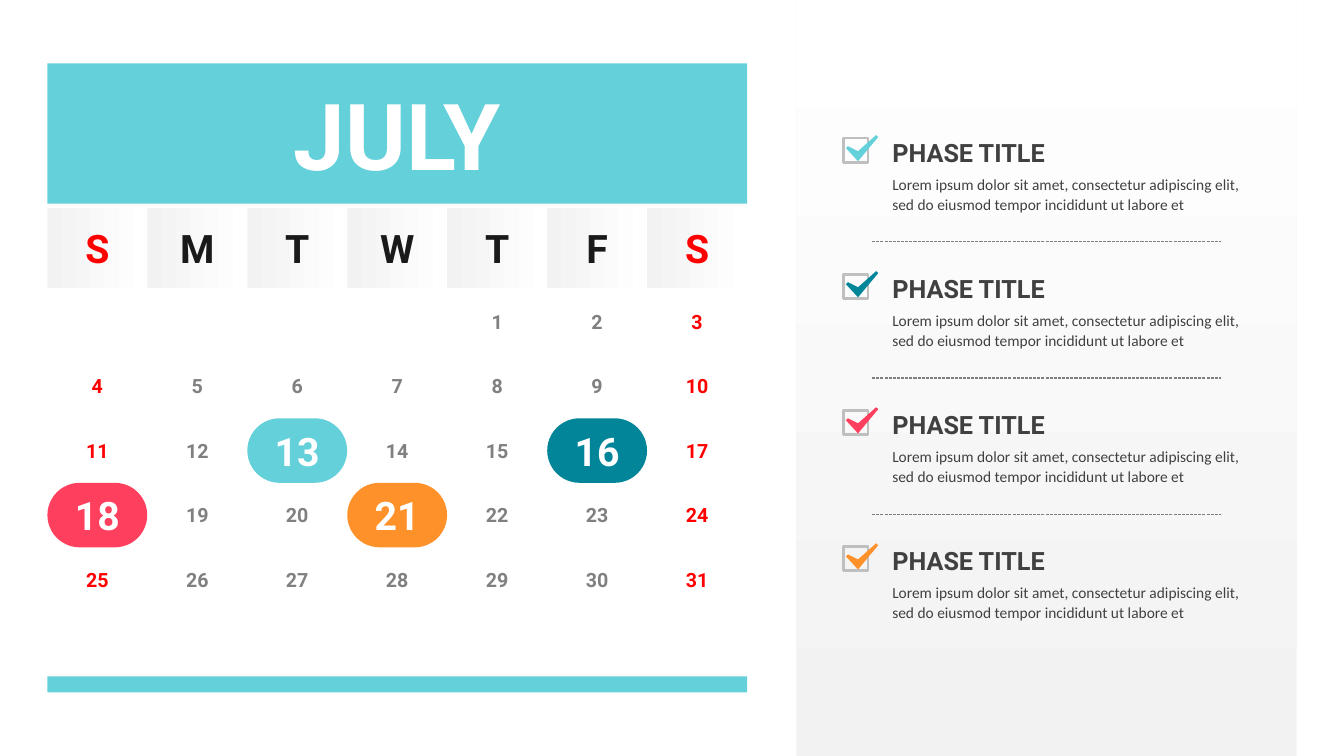
from dataclasses import dataclass

from lxml import etree
from pptx import Presentation
from pptx.dml.color import RGBColor
from pptx.enum.dml import MSO_LINE
from pptx.enum.shapes import MSO_CONNECTOR, MSO_SHAPE
from pptx.enum.text import MSO_ANCHOR, MSO_AUTO_SIZE, PP_ALIGN
from pptx.oxml.ns import qn
from pptx.util import Inches, Pt

RECT = MSO_SHAPE.RECTANGLE
PILL = MSO_SHAPE.ROUNDED_RECTANGLE
STRAIGHT = MSO_CONNECTOR.STRAIGHT
SYS_DASH = MSO_LINE.SQUARE_DOT
CENTER, LEFT = PP_ALIGN.CENTER, PP_ALIGN.LEFT
MIDDLE, TOP = MSO_ANCHOR.MIDDLE, MSO_ANCHOR.TOP
FIXED, GROW = MSO_AUTO_SIZE.NONE, MSO_AUTO_SIZE.SHAPE_TO_FIT_TEXT


@dataclass(frozen=True)
class Theme:
    heading_font: str = "Roboto"
    body_font: str = "Calibri"
    aqua: str = "64D0DA"
    teal: str = "028599"
    pink: str = "FF3F5E"
    orange: str = "FE912A"
    white: str = "FFFFFF"
    pale: str = "F2F2F2"
    weekend: str = "FF0000"
    weekday: str = "1A1A1A"
    date: str = "808080"
    text: str = "404040"
    box: str = "BFBFBF"
    month_size: int = 66
    large_size: int = 28
    phase_size: int = 18
    date_size: int = 14
    body_size: int = 11


def apply(target, values):
    for attribute, value in values.items():
        setattr(target, attribute, value)


class CalendarSlide:
    def __init__(self, slide, theme):
        self.slide, self.shapes, self.theme = slide, slide.shapes, theme

    def frame(self, shape, anchor=MIDDLE, auto_size=FIXED):
        frame = shape.text_frame
        apply(frame, dict(margin_left=0, margin_right=0, margin_top=0, margin_bottom=0,
                          word_wrap=True, vertical_anchor=anchor, auto_size=auto_size))
        return frame

    def add_text(self, paragraph, text, size, color, font=None, bold=True, **layout):
        apply(paragraph, {"alignment": CENTER, **layout})
        run = paragraph.add_run()
        run.text = text
        apply(run.font, dict(name=font or self.theme.heading_font, size=Pt(size), bold=bold))
        run.font.color.rgb = RGBColor.from_string(color)

    def label(self, shape, text, size, color):
        self.add_text(self.frame(shape).paragraphs[0], text, size, color)

    def paint(self, shape, color):
        shape.fill.solid()
        shape.fill.fore_color.rgb = RGBColor.from_string(color)
        shape.line.fill.background()

    def title(self, text, left, top, width, height):
        title = self.shapes.title
        apply(title, dict(left=Inches(left), top=Inches(top),
                          width=Inches(width), height=Inches(height)))
        self.paint(title, self.theme.aqua)
        self.label(title, text, self.theme.month_size, self.theme.white)

    def block(self, kind, left, top, width, height, color=None):
        block = self.shapes.add_shape(kind, Inches(left), Inches(top), Inches(width), Inches(height))
        block.shadow.inherit = False
        if color:
            self.paint(block, color)
        return block

    def fade(self, left, top, width, height, angle):
        block = self.block(RECT, left, top, width, height)
        block.line.fill.background()
        block.fill.gradient()
        block.fill.gradient_angle = angle
        for stop, color in zip(block.fill.gradient_stops, (self.theme.pale, self.theme.white)):
            stop.color.rgb = RGBColor.from_string(color)
        return block

    def text_box(self, left, top, width, height):
        return self.shapes.add_textbox(Inches(left), Inches(top), Inches(width), Inches(height))

    def checkbox(self, left, top, color):
        box = self.block(RECT, left, top, 0.24, 0.24)
        box.fill.background()
        box.line.color.rgb = RGBColor.from_string(self.theme.box)
        box.line.width = Pt(2)
        start, *rest = [(30, 0), (32, 2), (12, 26), (0, 13), (2, 11), (12, 16)]
        outline = self.shapes.build_freeform(*start, scale=Inches(0.01))
        outline.add_line_segments(rest, close=True)
        tick = outline.convert_to_shape(Inches(left + 0.02), Inches(top - 0.03))
        tick.shadow.inherit = False
        self.paint(tick, color)

    def phase(self, left, top, heading, body):
        theme = self.theme
        frame = self.frame(self.text_box(left, top, 3.54, 0.8), TOP, GROW)
        spacing = dict(alignment=LEFT, line_spacing=1.1, space_before=Pt(4))
        self.add_text(frame.paragraphs[0], heading, theme.phase_size, theme.text, **spacing)
        self.add_text(frame.add_paragraph(), body, theme.body_size, theme.text,
                      theme.body_font, False, **spacing)

    def divider(self, left, right, top):
        divider = self.shapes.add_connector(STRAIGHT, Inches(left), Inches(top),
                                            Inches(right), Inches(top))
        divider.line.color.rgb = RGBColor.from_string(self.theme.date)
        apply(divider.line, dict(width=Pt(0.75), dash_style=SYS_DASH))
        etree.SubElement(divider._element.spPr, qn("a:effectLst"))


def build_calendar(page):
    theme = page.theme
    left, width = 0.47, 6.94
    column_width = width / 7
    first_row, row_height = 2.87, 0.64
    first_column = 4
    highlights = {13: theme.aqua, 16: theme.teal, 18: theme.pink, 21: theme.orange}

    page.title("JULY", left, 0.63, width, 1.39)
    for column, weekday in enumerate("SMTWTFS"):
        header = page.fade(left + column * column_width, 2.06, 0.99, 0.8, 0)
        color = theme.weekend if column in (0, 6) else theme.weekday
        page.label(header, weekday, theme.large_size, color)

    for day in range(1, 32):
        row, column = divmod(day - 1 + first_column, 7)
        place = (left + column * column_width, first_row + row * row_height, 0.99, row_height)
        if day in highlights:
            pill = page.block(PILL, *place, highlights[day])
            pill.adjustments[0] = 0.5
            page.label(pill, str(day), theme.large_size, theme.white)
        else:
            color = theme.weekend if column in (0, 6) else theme.date
            page.label(page.text_box(*place), str(day), theme.date_size, color)
    page.block(RECT, left, 6.71, width, 0.16, theme.aqua)


def build_phases(page):
    theme = page.theme
    body = ("Lorem ipsum dolor sit amet, consectetur adipiscing elit, "
            "sed do eiusmod tempor incididunt ut labore et")
    colors = (theme.aqua, theme.teal, theme.pink, theme.orange)
    pitch = 1.35
    page.fade(7.9, 0, 4.96, 7.5, 90)
    for index, color in enumerate(colors):
        offset = index * pitch
        page.checkbox(8.37, 1.37 + offset, color)
        page.phase(8.85, 1.33 + offset, "PHASE TITLE", body)
        if index < len(colors) - 1:
            page.divider(8.65, 12.11, 2.4 + offset)


def main():
    deck = Presentation()
    apply(deck, dict(slide_width=Inches(13.33), slide_height=Inches(7.5)))
    title_only = deck.slide_layouts[5]
    page = CalendarSlide(deck.slides.add_slide(title_only), Theme())
    build_calendar(page)
    build_phases(page)
    deck.save("out.pptx")


if __name__ == "__main__":
    main()
